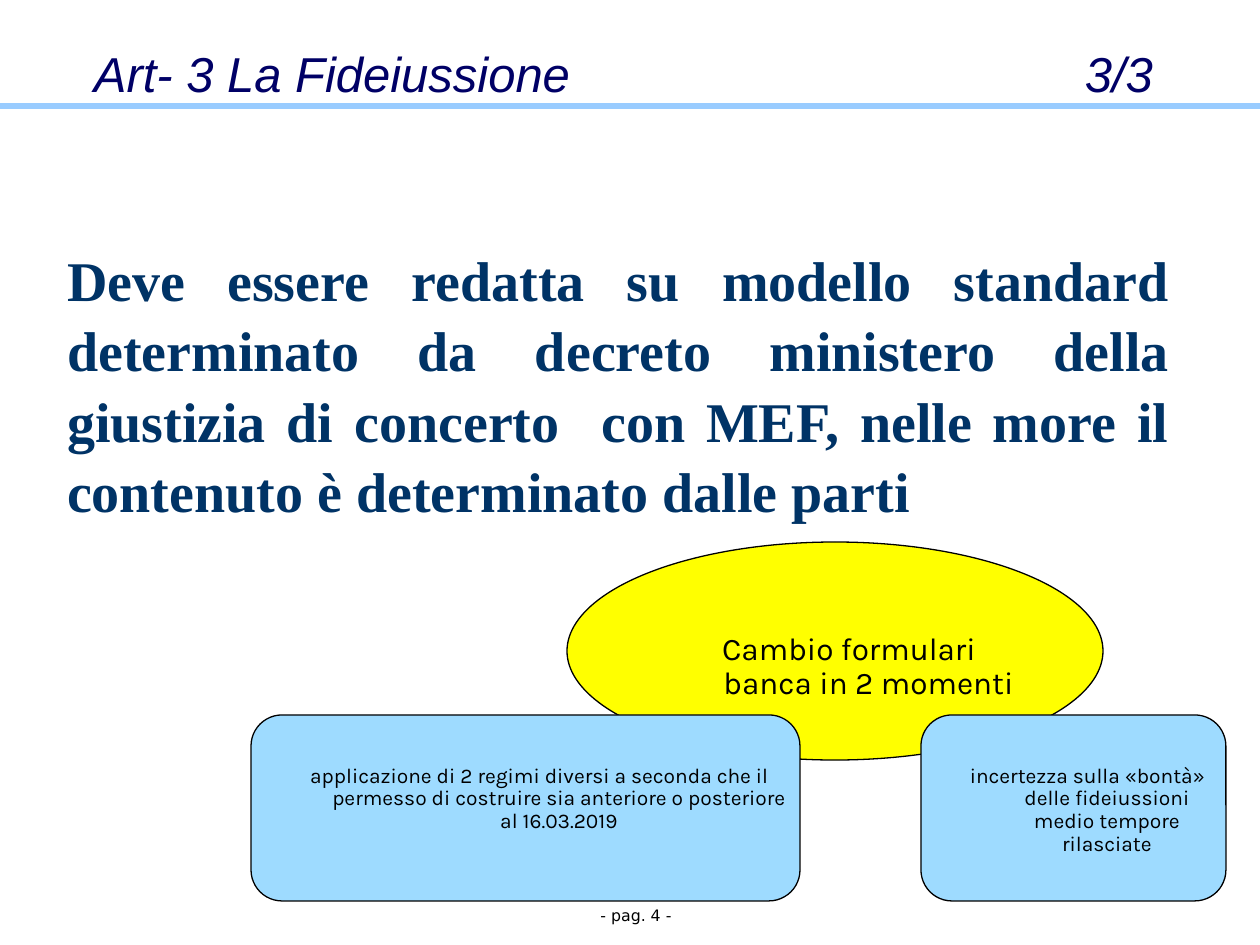
from dataclasses import dataclass

from lxml.etree import SubElement
from pptx import Presentation
from pptx.dml.color import RGBColor
from pptx.enum.shapes import MSO_CONNECTOR, MSO_SHAPE
from pptx.enum.text import MSO_ANCHOR, PP_ALIGN
from pptx.oxml.ns import qn
from pptx.util import Emu, Pt

PX_PER_INCH = 126


@dataclass(frozen=True)
class Box:
    left: int
    top: int
    width: int
    height: int


@dataclass(frozen=True)
class Style:
    font: str
    size: int
    color: str
    bold: bool = False
    italic: bool = False


@dataclass(frozen=True)
class Bubble:
    preset: MSO_SHAPE
    box: Box
    fill: str
    size: int
    top_inset: int
    text: str


def px(length: int) -> Emu:
    return Emu(round(length * 914400 / PX_PER_INCH))


def rgb(color: str) -> RGBColor:
    return RGBColor.from_string(color)


def place(box: Box) -> tuple[Emu, Emu, Emu, Emu]:
    return px(box.left), px(box.top), px(box.width), px(box.height)


def write(shape, text: str, style: Style, align: PP_ALIGN, anchor: MSO_ANCHOR,
          side_inset: int = 13, top_inset: int = 6):
    frame = shape.text_frame
    frame.word_wrap = True
    frame.vertical_anchor = anchor
    frame.margin_left = frame.margin_right = px(side_inset)
    frame.margin_top, frame.margin_bottom = px(top_inset), px(6)
    paragraph = frame.paragraphs[0]
    paragraph.alignment = align
    run = paragraph.add_run()
    run.text = text
    run.font.name = style.font
    run.font.size = Pt(style.size)
    run.font.bold = style.bold
    run.font.italic = style.italic
    run.font.color.rgb = rgb(style.color)
    return paragraph


def add_text(slide, box: Box, text: str, style: Style, align: PP_ALIGN,
             anchor: MSO_ANCHOR, top_inset: int = 6):
    return write(slide.shapes.add_textbox(*place(box)), text, style, align,
                 anchor, top_inset=top_inset)


def add_right_tab(paragraph, position: int) -> None:
    properties = paragraph._p.get_or_add_pPr()
    tabs = SubElement(properties, qn("a:tabLst"))
    SubElement(tabs, qn("a:tab"), pos=str(px(position)), algn="r")


def add_rule(slide, y: int, width: int, color: str, weight: int) -> None:
    rule = slide.shapes.add_connector(MSO_CONNECTOR.STRAIGHT, 0, px(y), px(width), px(y))
    rule.line.color.rgb = rgb(color)
    rule.line.width = Pt(weight)
    SubElement(rule._element.spPr, qn("a:effectLst"))


def add_bubble(slide, bubble: Bubble) -> None:
    shape = slide.shapes.add_shape(bubble.preset, *place(bubble.box))
    shape.shadow.inherit = False
    shape.fill.solid()
    shape.fill.fore_color.rgb = rgb(bubble.fill)
    shape.line.color.rgb = rgb("000000")
    shape.line.width = Pt(0.75)
    paragraph = write(shape, bubble.text, Style("Karla", bubble.size, "000000"),
                      PP_ALIGN.CENTER, MSO_ANCHOR.TOP, 5, bubble.top_inset)
    paragraph.line_spacing = 0.9
    properties = paragraph._p.get_or_add_pPr()
    properties.set("marL", str(px(67)))
    properties.set("indent", str(-px(39)))


BUBBLES = [
    Bubble(MSO_SHAPE.OVAL, Box(567, 542, 536, 218), "FFFF00", 18, 59,
           "Cambio formulari banca in 2 momenti"),
    Bubble(MSO_SHAPE.ROUNDED_RECTANGLE, Box(921, 715, 305, 186), "9EDBFF", 12, 41,
           "incertezza sulla «bontà» delle fideiussioni medio tempore rilasciate"),
    Bubble(MSO_SHAPE.ROUNDED_RECTANGLE, Box(251, 715, 549, 186), "9EDBFF", 12, 41,
           "applicazione di 2 regimi diversi a seconda che il permesso di costruire "
           "sia anteriore o posteriore al 16.03.2019"),
]


def main() -> None:
    deck = Presentation()
    deck.slide_width, deck.slide_height = px(1260), px(945)
    slide = deck.slides.add_slide(deck.slide_layouts[6])

    add_text(slide, Box(543, 893, 186, 44), "- pag. 4 -",
             Style("DejaVu Sans", 9, "000000"), PP_ALIGN.CENTER, MSO_ANCHOR.MIDDLE)
    add_rule(slide, 106, 1260, "99CCFF", 3)
    title = add_text(slide, Box(81, 14, 1145, 94), "Art- 3 La Fideiussione\t3/3",
                     Style("Arial", 28, "000066", italic=True),
                     PP_ALIGN.LEFT, MSO_ANCHOR.BOTTOM)
    add_right_tab(title, 1059)
    body = add_text(slide, Box(54, 155, 1129, 746),
                    "Deve essere redatta su modello standard determinato da decreto "
                    "ministero della giustizia di concerto  con MEF, nelle more il "
                    "contenuto è determinato dalle parti",
                    Style("Times New Roman", 32, "003366", bold=True),
                    PP_ALIGN.JUSTIFY, MSO_ANCHOR.TOP, top_inset=87)
    body.line_spacing = 1.05
    for bubble in BUBBLES:
        add_bubble(slide, bubble)

    deck.save("out.pptx")


if __name__ == "__main__":
    main()
